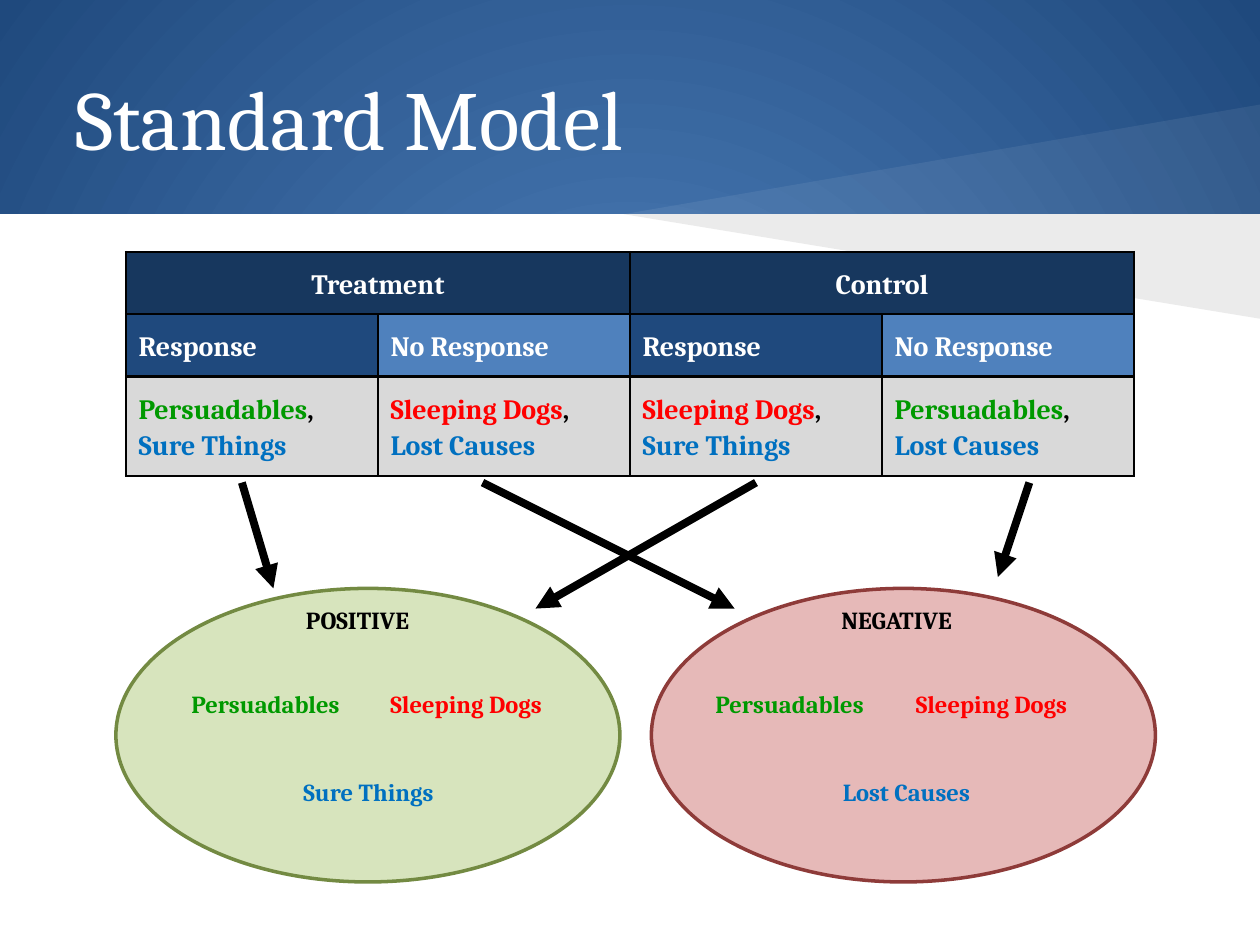
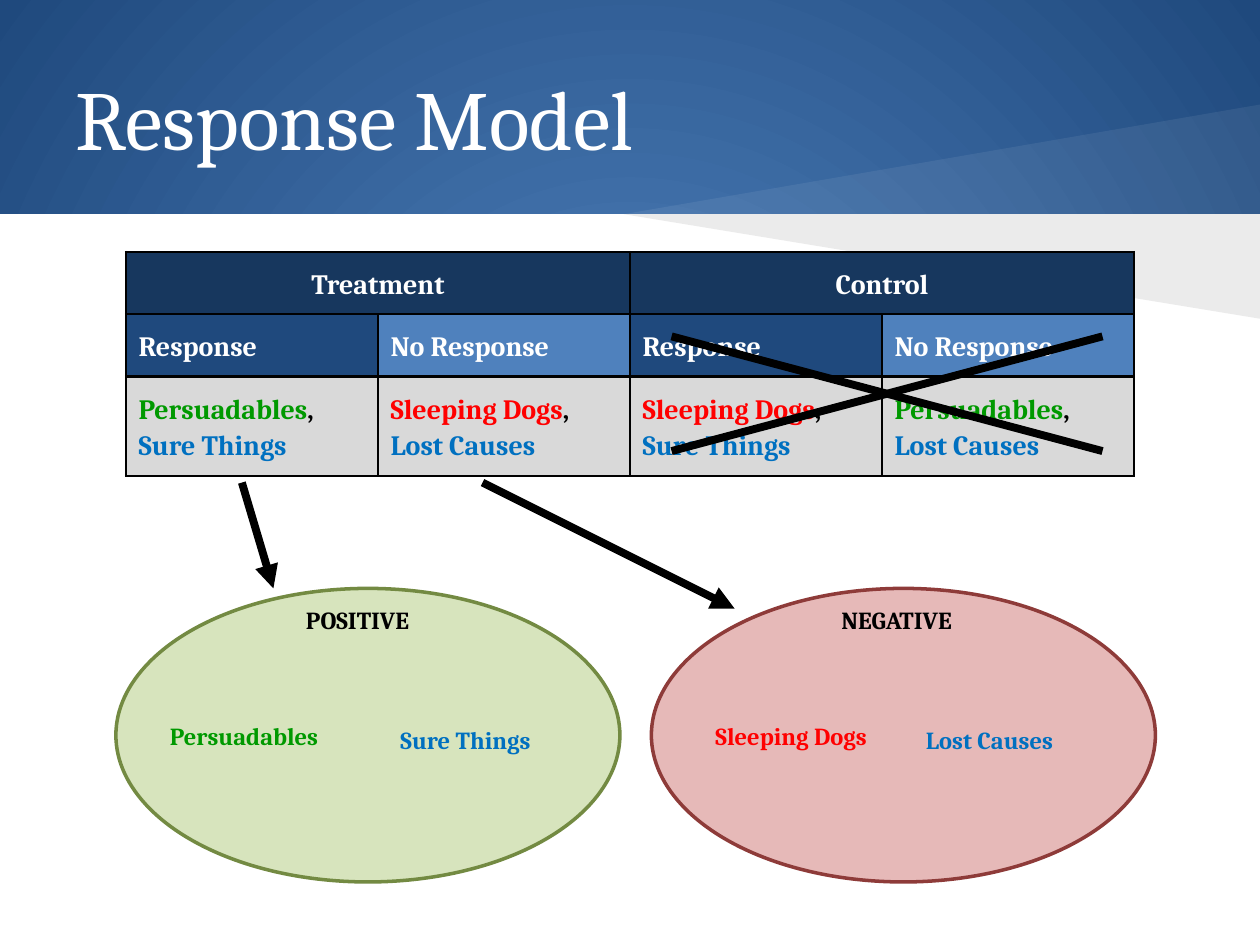
from lxml import etree
from pptx import Presentation
from pptx.dml.color import RGBColor
from pptx.enum.shapes import MSO_CONNECTOR as CONN, MSO_SHAPE as SHAPE
from pptx.enum.text import MSO_ANCHOR as ANCHOR, MSO_AUTO_SIZE as AUTO, PP_ALIGN as ALIGN
from pptx.oxml import parse_xml
from pptx.oxml.ns import nsdecls, qn
from pptx.util import Inches, Pt

# Shared look
FONT = "Cambria"
WHITE, BLACK = "FFFFFF", "000000"
NAVY, DARK, BLUE, GREY = "17375E", "1F497D", "4F81BD", "D9D9D9"
GREEN, RED, AZURE = "009900", "FF0000", "0070C0"
BAND_H = 1.7

# Customer groups: colour, label width, line spacing of the label
GROUPS = {
    "Persuadables": (GREEN, 1.42, 1.0),
    "Sleeping Dogs": (RED, 1.5, 1.0),
    "Sure Things": (AZURE, 1.27, 1.15),
    "Lost Causes": (AZURE, 1.25, 1.15),
}

# Table content
TABLE_BOX = (1, 2, 8, 1.77)
ROW_HEIGHTS = (0.49, 0.49, 0.79)
ARMS = ("Treatment", "Control")
OUTCOMES = (("Response", DARK), ("No Response", BLUE)) * 2
CELL_GROUPS = (
    ("Persuadables", "Sure Things"),
    ("Sleeping Dogs", "Lost Causes"),
    ("Sleeping Dogs", "Sure Things"),
    ("Persuadables", "Lost Causes"),
)

# Ellipses: heading, heading width, left edge, fill, line
ELLIPSE_TOP, ELLIPSE_W, ELLIPSE_H = 4.67, 4, 2.33
NEGATIVE = ("NEGATIVE", 1.14, 5.17, "E6B9B8", "8E3B39")
POSITIVE = ("POSITIVE", 1.06, 0.92, "D7E4BD", "738A42")

# Arrows from the table to the ellipses: start x, end x, end y
ARROW_TOP = 3.83
TREATED_YES = (1.92, 2.17, 4.67)
TREATED_NO = (3.83, 5.83, 4.83)
CONTROL_YES = (6, 4.25, 4.83)
CONTROL_NO = (8.17, 7.92, 4.58)


def rgb(hex_text):
    return RGBColor.from_string(hex_text)


def add_run(p, text, size, color, bold=True):
    r = p.add_run()
    r.text = text
    r.font.name, r.font.size, r.font.bold = FONT, Pt(size), bold
    r.font.color.rgb = rgb(color)


def paint(sp, fill, line=None, alpha=None):
    sp.shadow.inherit = False
    sp.fill.solid()
    sp.fill.fore_color.rgb = rgb(fill)
    if alpha:
        color = sp.element.spPr.find(qn("a:solidFill"))[0]
        etree.SubElement(color, qn("a:alpha"), val=str(alpha * 1000))
    if line:
        sp.line.color.rgb = rgb(line)
        sp.line.width = Pt(2)
    else:
        sp.line.fill.background()


def add_line(s, x1, y1, x2, y2, arrow=False):
    cx = s.shapes.add_connector(CONN.STRAIGHT, *map(Inches, (x1, y1, x2, y2)))
    cx.line.color.rgb = rgb(BLACK)
    cx.line.width = Pt(4.5)
    if arrow:
        etree.SubElement(cx.line._get_or_add_ln(), qn("a:tailEnd"), type="triangle")
    etree.SubElement(cx.element.spPr, qn("a:effectLst"))


def add_label(s, x, y, w, text, color, spacing=1.0):
    sp = s.shapes.add_textbox(Inches(x), Inches(y), Inches(w), Inches(0.34))
    tf = sp.text_frame
    tf.word_wrap = False
    tf.auto_size = AUTO.SHAPE_TO_FIT_TEXT
    p = tf.paragraphs[0]
    p.line_spacing = spacing
    add_run(p, text, 14, color)


def build_master(prs, s):
    """Draw the band and wedges on s, then move them to the slide master."""
    master = prs.slide_master
    fill = master.background.fill
    fill.gradient()
    for stop, color in zip(fill.gradient_stops, (BLUE, DARK)):
        stop.color.rgb = rgb(color)
    lin = master.element.xpath("./p:cSld/p:bg//a:lin")[0]
    lin.getparent().replace(lin, parse_xml(
        f'<a:path {nsdecls("a")} path="circle">'
        '<a:fillToRect l="50000" t="50000" r="50000" b="50000"/></a:path>'))

    page = s.shapes.add_shape(SHAPE.RECTANGLE, 0, Inches(BAND_H),
                              Inches(10), Inches(7.5 - BAND_H))
    paint(page, WHITE)
    parts = [page]
    for edge_y, color, alpha in ((0.83, WHITE, 7), (2.53, BLACK, 8)):
        fb = s.shapes.build_freeform(Inches(10), Inches(BAND_H))
        fb.add_line_segments([(Inches(4.95), Inches(BAND_H)),
                              (Inches(10), Inches(edge_y))], close=True)
        wedge = fb.convert_to_shape()
        paint(wedge, color, alpha=alpha)
        parts.append(wedge)
    for number, sp in enumerate(parts, 101):
        sp.element.nvSpPr.cNvPr.set("id", str(number))
        master.shapes.element.append(sp.element)


def set_title(s, text):
    title = s.shapes.title
    title.left, title.top, title.width, title.height = map(Inches, (0.5, 0.3, 9, 1.25))
    tf = title.text_frame
    tf.auto_size, tf.vertical_anchor = AUTO.NONE, ANCHOR.MIDDLE
    tf.margin_left = tf.margin_right = tf.margin_top = tf.margin_bottom = Inches(0.1)
    p = tf.paragraphs[0]
    p.alignment = ALIGN.LEFT
    add_run(p, text, 48, WHITE, bold=False)


def fill_cell(cell, fill, lines, align=ALIGN.LEFT):
    """Each line is a list of (text, colour) runs."""
    cell.margin_left = cell.margin_right = Inches(0.1)
    cell.margin_top = cell.margin_bottom = Inches(0.1)
    cell.fill.solid()
    cell.fill.fore_color.rgb = rgb(fill)
    tf = cell.text_frame
    for i, runs in enumerate(lines):
        p = tf.add_paragraph() if i else tf.paragraphs[0]
        p.alignment, p.line_spacing = align, 1.15
        for text, color in runs:
            add_run(p, text, 16, color)


def add_borders(cell):
    tc_pr = cell._tc.get_or_add_tcPr()
    for i, side in enumerate("LRTB"):
        tc_pr.insert(i, parse_xml(
            f'<a:ln{side} {nsdecls("a")} w="{Pt(1.5)}"><a:solidFill>'
            f'<a:srgbClr val="{BLACK}"/></a:solidFill></a:ln{side}>'))


def add_group_table(s, box):
    table = s.shapes.add_table(3, 4, *map(Inches, box)).table
    table.first_row = table.horz_banding = False
    for col in table.columns:
        col.width = Inches(box[2] / 4)
    for row, height in zip(table.rows, ROW_HEIGHTS):
        row.height = Inches(height)
    for i, arm in enumerate(ARMS):
        cell = table.cell(0, 2 * i)
        cell.merge(table.cell(0, 2 * i + 1))
        fill_cell(cell, NAVY, [[(arm, WHITE)]], ALIGN.CENTER)
    for c, ((outcome, fill), (first, second)) in enumerate(zip(OUTCOMES, CELL_GROUPS)):
        fill_cell(table.cell(1, c), fill, [[(outcome, WHITE)]])
        fill_cell(table.cell(2, c), GREY, [[(first, GROUPS[first][0]), (",", BLACK)],
                                           [(second, GROUPS[second][0])]])
    for cell in table.iter_cells():
        add_borders(cell)


def add_ellipse(s, style, labels):
    """Labels are (group, x, y), measured from the ellipse's corner."""
    heading, heading_w, left, fill, line = style
    sp = s.shapes.add_shape(SHAPE.OVAL, *map(
        Inches, (left, ELLIPSE_TOP, ELLIPSE_W, ELLIPSE_H)))
    paint(sp, fill, line)
    add_label(s, left + 1.41, ELLIPSE_TOP + 0.08, heading_w, heading, BLACK)
    for group, x, y in labels:
        color, width, spacing = GROUPS[group]
        add_label(s, left + x, ELLIPSE_TOP + y, width, group, color, spacing)


def cross_out_control(s, box):
    left, right = box[0] + 4.33, box[0] + 7.75
    top, bottom = box[1] + 0.67, box[1] + 1.58
    add_line(s, left, top, right, bottom)
    add_line(s, right, top, left, bottom)


def build_model(s, title, positive, negative, arrows):
    set_title(s, title)
    add_group_table(s, TABLE_BOX)
    add_ellipse(s, NEGATIVE, negative)
    add_ellipse(s, POSITIVE, positive)
    for x1, x2, y2 in arrows:
        add_line(s, x1, ARROW_TOP, x2, y2, arrow=True)


def main():
    prs = Presentation()
    prs.slide_width, prs.slide_height = Inches(10), Inches(7.5)
    title_only = prs.slide_layouts[5]

    # Standard model
    s = prs.slides.add_slide(title_only)
    build_master(prs, s)
    build_model(
        s, "Standard Model",
        positive=[("Persuadables", 0.5, 0.75), ("Sleeping Dogs", 2.08, 0.75),
                  ("Sure Things", 1.39, 1.41)],
        negative=[("Persuadables", 0.41, 0.75), ("Sleeping Dogs", 2, 0.75),
                  ("Lost Causes", 1.42, 1.41)],
        arrows=[TREATED_YES, CONTROL_NO, TREATED_NO, CONTROL_YES])

    # Response model, which leaves out the control arm
    s = prs.slides.add_slide(title_only)
    build_model(
        s, "Response Model",
        positive=[("Persuadables", 0.33, 1), ("Sure Things", 2.16, 1)],
        negative=[("Sleeping Dogs", 0.41, 1), ("Lost Causes", 2.08, 1)],
        arrows=[TREATED_YES, TREATED_NO])
    cross_out_control(s, TABLE_BOX)

    prs.save("out.pptx")


if __name__ == "__main__":
    main()
